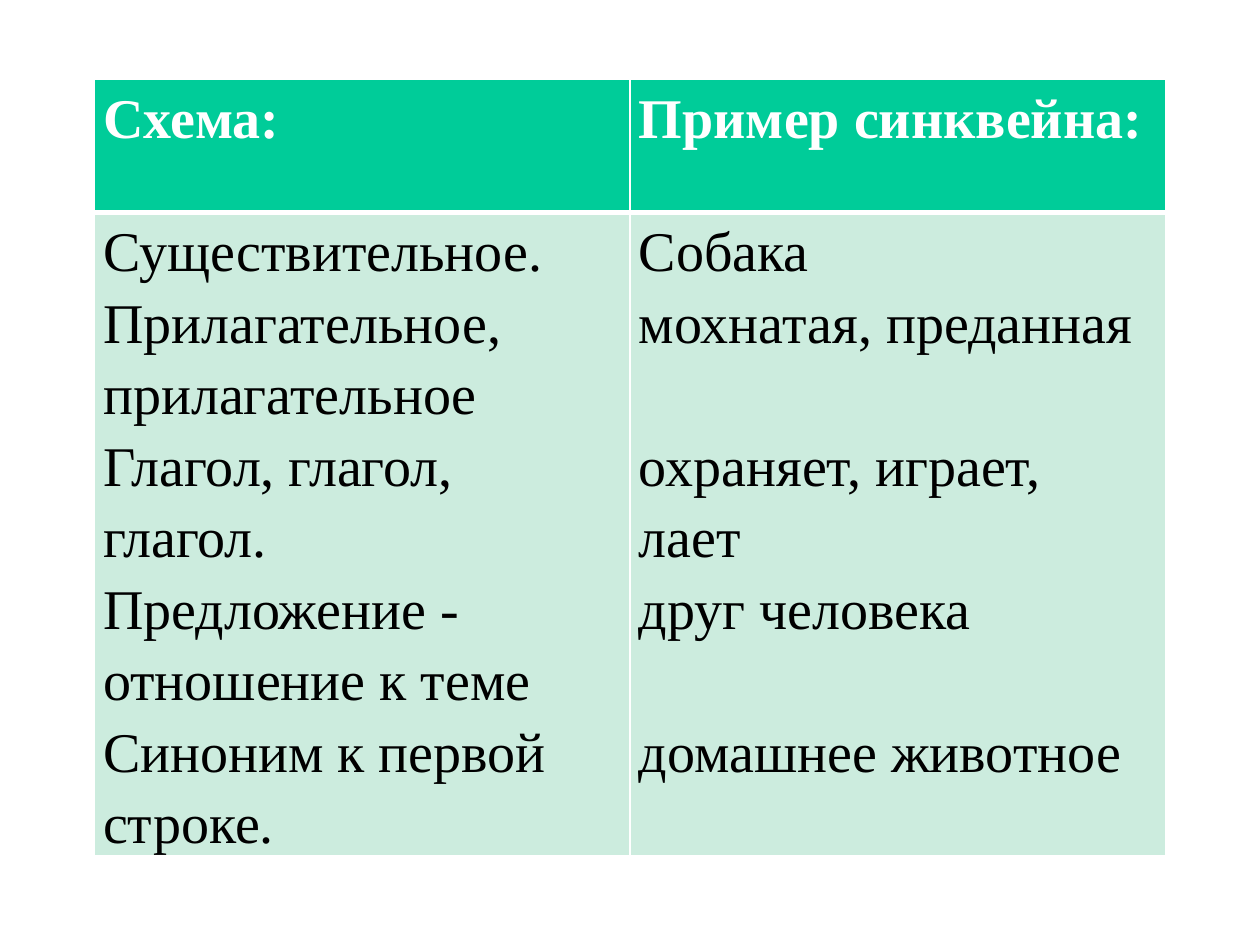
from dataclasses import dataclass

from lxml import etree
from pptx import Presentation
from pptx import util as u
from pptx.dml.color import RGBColor
from pptx.oxml import ns

WHITE = RGBColor(0xFF, 0xFF, 0xFF)
BLACK = RGBColor(0x00, 0x00, 0x00)
GREEN = RGBColor(0x00, 0xCC, 0x99)
MINT = RGBColor(0xCC, 0xEC, 0xDE)

FONT = "Times New Roman"
LINE_GAP = u.Pt(41)  # height of one text line
COLUMN_WIDTH = u.Cm(10.8)
HEADER_HEIGHT = u.Cm(2.69)
BODY_HEIGHT = u.Cm(12.57)


@dataclass(frozen=True)
class Line:
    text: str
    gap_before: bool = False


@dataclass(frozen=True)
class RowStyle:
    fill: RGBColor
    color: RGBColor
    bold: bool
    top_border: float
    bottom_border: float


HEADER = RowStyle(GREEN, WHITE, True, 1, 3)
BODY = RowStyle(MINT, BLACK, False, 3, 1)

ROWS = [
    (HEADER, [[Line("Схема:")], [Line("Пример синквейна:")]]),
    (BODY, [
        [
            Line("Существительное."),
            Line("Прилагательное, прилагательное"),
            Line("Глагол, глагол, глагол."),
            Line("Предложение - отношение к теме"),
            Line("Синоним к первой строке."),
        ],
        [
            Line("Собака"),
            Line("мохнатая, преданная"),
            Line("охраняет, играет, лает", gap_before=True),
            Line("друг человека"),
            Line("домашнее животное", gap_before=True),
        ],
    ]),
]


def set_borders(cell, style: RowStyle) -> None:
    """Draw white cell borders; they must precede the fill in the XML."""
    widths = {"lnL": 1, "lnR": 1, "lnT": style.top_border, "lnB": style.bottom_border}
    properties = cell._tc.get_or_add_tcPr()
    for index, (tag, width) in enumerate(widths.items()):
        border = etree.Element(ns.qn(f"a:{tag}"), w=str(u.Pt(width)))
        fill = etree.SubElement(border, ns.qn("a:solidFill"))
        etree.SubElement(fill, ns.qn("a:srgbClr"), val=str(WHITE))
        properties.insert(index, border)


def fill_cell(cell, lines: list[Line], style: RowStyle) -> None:
    cell.margin_left = cell.margin_right = u.Cm(0.18)
    cell.margin_top = cell.margin_bottom = 0
    cell.fill.solid()
    cell.fill.fore_color.rgb = style.fill
    set_borders(cell, style)
    for index, line in enumerate(lines):
        para = cell.text_frame.paragraphs[0] if index == 0 else cell.text_frame.add_paragraph()
        para.line_spacing = 1.15
        if line.gap_before:
            para.space_before = LINE_GAP
        span = para.add_run()
        span.text = line.text
        span.font.name = FONT
        span.font.size = u.Pt(32)
        span.font.bold = style.bold
        span.font.color.rgb = style.color


def main() -> None:
    deck = Presentation()
    deck.slide_width, deck.slide_height = u.Cm(25.4), u.Cm(19.05)
    page = deck.slides.add_slide(deck.slide_layouts[6])
    table = page.shapes.add_table(
        len(ROWS), 2, u.Cm(1.9), u.Cm(1.59),
        2 * COLUMN_WIDTH, HEADER_HEIGHT + BODY_HEIGHT,
    ).table
    for column in table.columns:
        column.width = COLUMN_WIDTH
    for row, height in zip(table.rows, (HEADER_HEIGHT, BODY_HEIGHT)):
        row.height = height
    for row, (style, texts) in zip(table.rows, ROWS):
        for cell, lines in zip(row.cells, texts):
            fill_cell(cell, lines, style)
    deck.save("out.pptx")


if __name__ == "__main__":
    main()
